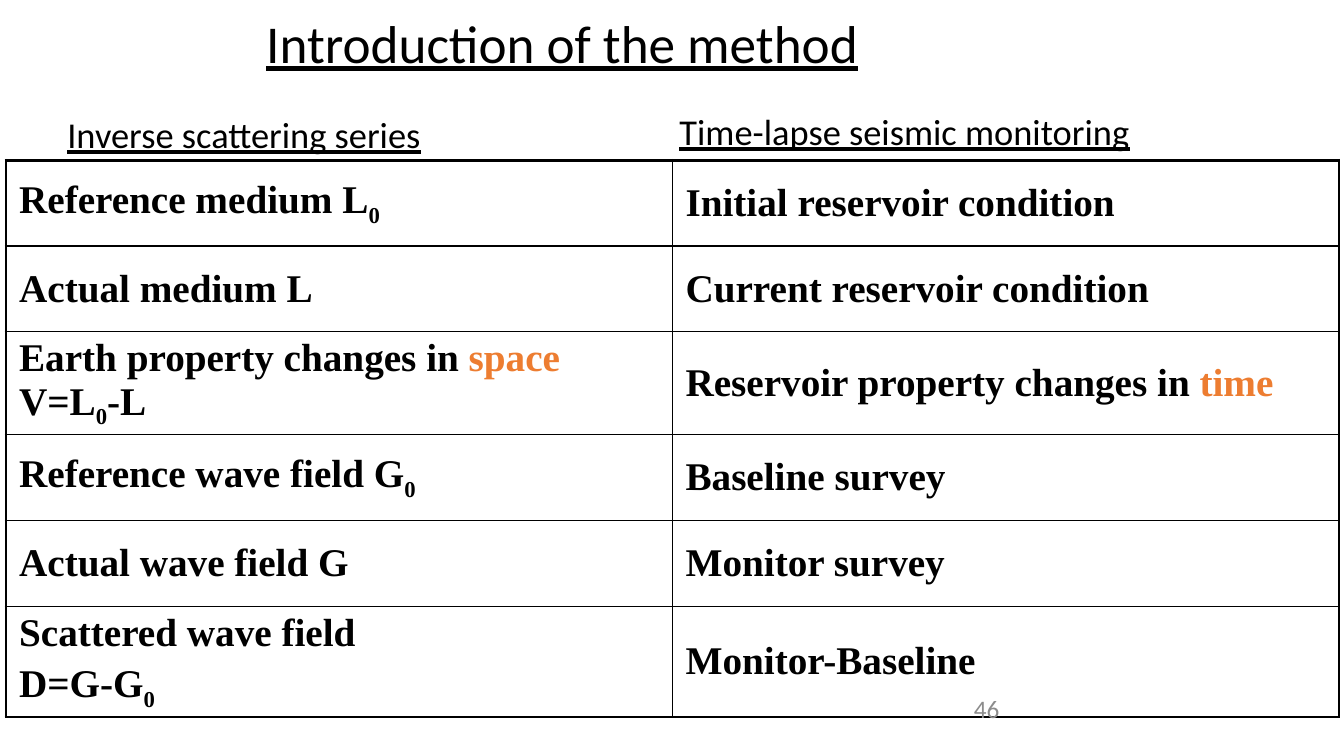
from dataclasses import dataclass

from lxml import etree
from pptx import Presentation
from pptx.dml.color import RGBColor
from pptx.enum.text import MSO_ANCHOR, PP_ALIGN
from pptx.oxml.ns import qn
from pptx.util import Inches, Pt

LEFT = PP_ALIGN.LEFT
TOP, MIDDLE = MSO_ANCHOR.TOP, MSO_ANCHOR.MIDDLE


@dataclass(frozen=True)
class Theme:
    ink: str = "000000"
    accent: str = "ED7D31"
    muted: str = "8C8C8C"
    sans: str = "Calibri"
    serif: str = "Times New Roman"
    title: float = 38
    head: float = 26
    body: float = 28
    small: float = 18
    gap: float = 5.6
    thick: float = 2.25
    thin: float = 1


THEME = Theme()
SUB = "sub"
MARK = "mark"

# Each cell is a list of paragraphs; each paragraph is a list of runs.
ROWS = [
    ([["Reference medium L", ("0", SUB)]], [["Initial reservoir condition"]]),
    ([["Actual medium L"]], [["Current reservoir condition"]]),
    ([["Earth property changes in ", ("space", MARK), " V=L", ("0", SUB), "-L"]],
     [["Reservoir property changes in ", ("time", MARK)]]),
    ([["Reference wave field G", ("0", SUB)]], [["Baseline survey"]]),
    ([["Actual wave field G"]], [["Monitor survey"]]),
    ([["Scattered wave field"], ["D=G-G", ("0", SUB)]], [["Monitor-Baseline"]]),
]


def write(frame, paras, size, font=THEME.sans, color=THEME.ink,
          bold=False, line=False, wrap=True, anchor=TOP):
    frame.word_wrap = wrap
    frame.vertical_anchor = anchor
    for i, parts in enumerate(paras):
        para = frame.paragraphs[0] if i == 0 else frame.add_paragraph()
        para.alignment = LEFT
        para.line_spacing = 1.0
        if i:
            para.space_before = Pt(THEME.gap)
        for part in parts:
            text, kind = (part, None) if isinstance(part, str) else part
            run = para.add_run()
            run.text = text
            face = run.font
            face.name, face.size = font, Pt(size)
            face.bold, face.underline = bold, line
            tint = THEME.accent if kind == MARK else color
            face.color.rgb = RGBColor.from_string(tint)
            if kind == SUB:
                run._r.get_or_add_rPr().set("baseline", "-25000")


def place(shape, box):
    shape.left, shape.top, shape.width, shape.height = map(Inches, box)


def add_title(slide, box):
    title = slide.shapes.title
    place(title, box)
    frame = title.text_frame
    frame.margin_left = frame.margin_right = Inches(0.1)
    frame.margin_top = frame.margin_bottom = Inches(0.05)
    write(frame, [["Introduction of the method"]], THEME.title,
          line=True, wrap=False)


def add_label(slide, box, text, size, **style):
    label = slide.shapes.add_textbox(*map(Inches, box))
    write(label.text_frame, [[text]], size, **style)


def set_edges(cell, widths):
    props = cell._tc.get_or_add_tcPr()
    for i, (side, width) in enumerate(widths.items()):
        edge = etree.Element(qn("a:ln" + side), w=str(Pt(width)))
        fill = etree.SubElement(edge, qn("a:solidFill"))
        etree.SubElement(fill, qn("a:srgbClr"), val=THEME.ink)
        props.insert(i, edge)


def add_grid(slide, box, rows):
    count, wide = len(rows), len(rows[0])
    grid = slide.shapes.add_table(count, wide, *map(Inches, box)).table
    grid.first_row = grid.horz_banding = False
    for r, row in enumerate(rows):
        for c, paras in enumerate(row):
            cell = grid.cell(r, c)
            cell.fill.background()
            cell.margin_left = cell.margin_right = Inches(0.13)
            cell.margin_top = cell.margin_bottom = Inches(0.05)
            write(cell.text_frame, paras, THEME.body, font=THEME.serif, bold=True)
            cell.vertical_anchor = MIDDLE
            # Outer edges are thick, inner ones thin
            outer = {"L": c == 0, "R": c == wide - 1,
                     "T": r == 0, "B": r == count - 1}
            set_edges(cell, {side: THEME.thick if out else THEME.thin
                             for side, out in outer.items()})


def main():
    deck = Presentation()
    deck.slide_width, deck.slide_height = Inches(13.33), Inches(7.5)
    slide = deck.slides.add_slide(deck.slide_layouts[5])

    # Comparison table
    add_grid(slide, (0.06, 1.59, 13.22, 5.1), ROWS)

    # Title and column headings
    add_title(slide, (2.54, 0.05, 6.14, 0.74))
    add_label(slide, (0.57, 1.06, 3.76, 0.54), "Inverse scattering series",
              THEME.head, line=True, wrap=False)
    add_label(slide, (6.64, 1.03, 4.71, 0.54), "Time-lapse seismic monitoring",
              THEME.head, line=True, wrap=False)

    # Page number
    add_label(slide, (9.56, 6.83, 2.78, 0.5), "46", THEME.small,
              color=THEME.muted)

    deck.save("out.pptx")


if __name__ == "__main__":
    main()
